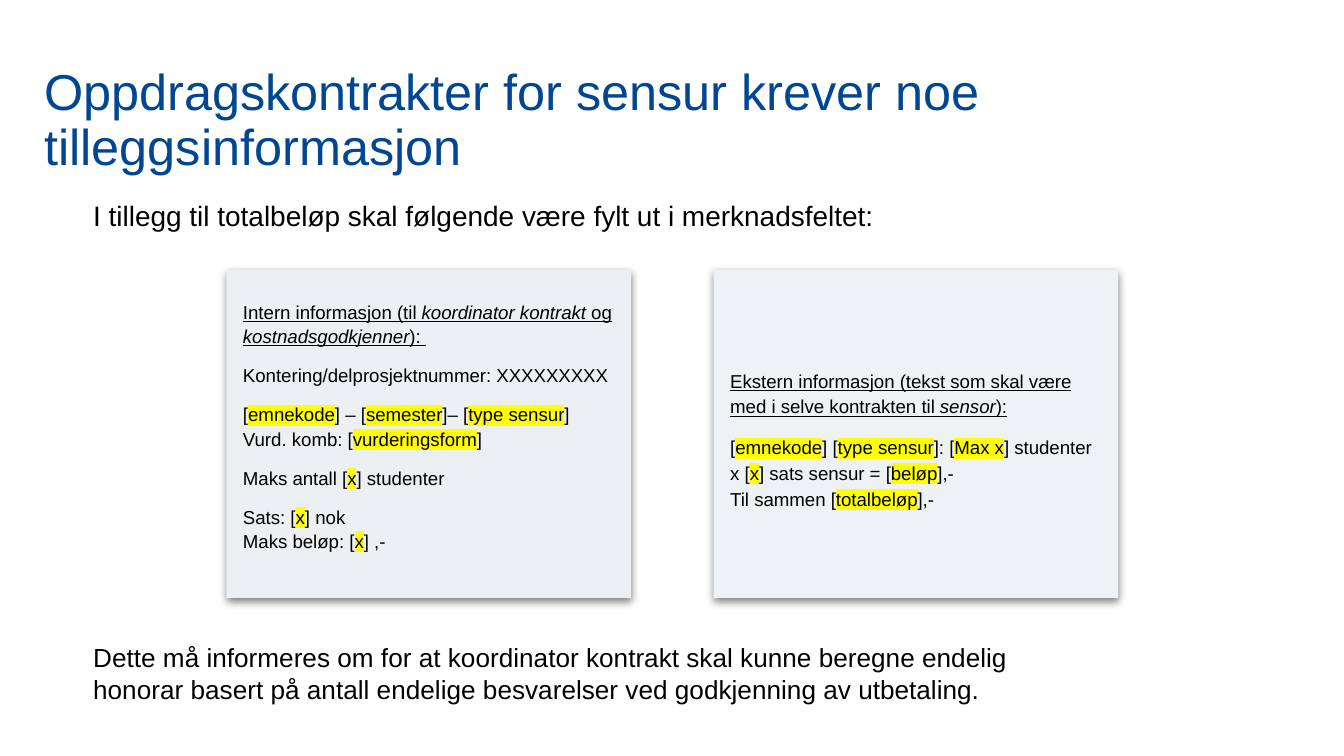
import pptx
import pptx.dml.color
import pptx.enum.shapes
import pptx.enum.text
import pptx.oxml
import pptx.oxml.ns
import pptx.util

PX = 4572
FONT = "Arial"
BLACK = "000000"
BLUE = "014693"
YELLOW = "FFFF00"
CARD_TOP, CARD_WIDTH, CARD_HEIGHT = 402, 602, 488
CARD_MARGIN = 5

INTERNAL_HEADING = "Intern informasjon (til |koordinator kontrakt| og |kostnadsgodkjenner|): "
INTERNAL_BODY = [
    "Kontering/delprosjektnummer: XXXXXXXXX",
    "[|emnekode|] – [|semester|]– [|type sensur|] \nVurd. komb: [|vurderingsform|]",
    "Maks antall [|x|] studenter",
    "Sats: [|x|] nok \nMaks beløp: [|x|] ,-",
]
EXTERNAL_HEADING = (
    "Ekstern informasjon (tekst som skal være med i selve kontrakten til |sensor|):"
)
EXTERNAL_BODY = [
    "[|emnekode|] [|type sensur|]: [|Max x|] studenter x [|x|] sats sensur = "
    "[|beløp|],- \nTil sammen [|totalbeløp|],-",
]


def px(value):
    """Convert whole px, 200 to the inch, to EMU."""
    return pptx.util.Emu(value * PX)


def color(value):
    """Convert a hex string to a colour."""
    return pptx.dml.color.RGBColor.from_string(value)


def highlight(run, value):
    """Put a highlight colour behind a run that already has a font colour."""
    properties = run.font._element
    mark = pptx.oxml.parse_xml(
        f'<a:highlight {pptx.oxml.ns.nsdecls("a")}><a:srgbClr val="{value}"/></a:highlight>'
    )
    properties.find(pptx.oxml.ns.qn("a:solidFill")).addnext(mark)


def write_paragraph(paragraph, text, size, fill=BLACK, spacing=1.0, before=0,
                    underline=False, mark=None):
    """Write text where parts between bars are italic or highlighted."""
    paragraph.alignment = pptx.enum.text.PP_ALIGN.LEFT
    paragraph.line_spacing = spacing
    paragraph.space_before = pptx.util.Pt(before)
    for index, part in enumerate(text.split("|")):
        marked = index % 2 == 1
        for line_number, line in enumerate(part.split("\n")):
            if line_number:
                paragraph.add_line_break()
            run = paragraph.add_run()
            run.text = line
            run.font.name = FONT
            run.font.size = pptx.util.Pt(size)
            run.font.color.rgb = color(fill)
            if underline:
                run.font.underline = True
            if marked and mark == "italic":
                run.font.italic = True
            if marked and mark == "highlight":
                highlight(run, YELLOW)


def set_frame(frame, margin_x=20, margin_y=10, anchor="TOP"):
    """Set wrapping, margins and anchor of a text frame."""
    frame.word_wrap = True
    frame.auto_size = pptx.enum.text.MSO_AUTO_SIZE.NONE
    frame.margin_left = frame.margin_right = px(margin_x)
    frame.margin_top = frame.margin_bottom = px(margin_y)
    frame.vertical_anchor = pptx.enum.text.MSO_ANCHOR[anchor]


def add_title(slide, text):
    """Place and format the slide title."""
    title = slide.shapes.title
    title.left, title.top, title.width, title.height = map(px, (46, 77, 1650, 208))
    set_frame(title.text_frame, anchor="MIDDLE")
    write_paragraph(title.text_frame.paragraphs[0], text, 27, fill=BLUE, spacing=0.9)


def add_body(slide, top, height, text, size):
    """Add a sentence in the body column."""
    box = slide.shapes.add_textbox(px(119), px(top), px(1410), px(height))
    set_frame(box.text_frame)
    write_paragraph(box.text_frame.paragraphs[0], text, size)


def add_rectangle(shapes, left, top, width, height, fill):
    """Add a filled rectangle without line or shadow."""
    shape = shapes.add_shape(
        pptx.enum.shapes.MSO_SHAPE.RECTANGLE, px(left), px(top), px(width), px(height)
    )
    shape.shadow.inherit = False
    shape.fill.solid()
    shape.fill.fore_color.rgb = color(fill)
    shape.line.fill.background()
    return shape


def add_shadow(shape):
    """Give a shape a soft shadow below."""
    effects = shape._element.spPr.find(pptx.oxml.ns.qn("a:effectLst"))
    effects.append(pptx.oxml.parse_xml(
        f'<a:outerShdw {pptx.oxml.ns.nsdecls("a")} blurRad="57150" dist="19050" '
        'dir="5400000" algn="ctr" rotWithShape="0"><a:srgbClr val="000000">'
        '<a:alpha val="50000"/></a:srgbClr></a:outerShdw>'
    ))


def add_card(slide, left, fill, text_top, text_height, heading, body, spacing):
    """Add a shadowed card with an underlined heading and template lines."""
    group = slide.shapes.add_group_shape()
    add_shadow(add_rectangle(group.shapes, left, CARD_TOP, CARD_WIDTH, CARD_HEIGHT, fill))
    label = add_rectangle(group.shapes, left + CARD_MARGIN, text_top,
                          CARD_WIDTH - 2 * CARD_MARGIN, text_height, fill)
    frame = label.text_frame
    set_frame(frame, margin_y=20)
    write_paragraph(frame.paragraphs[0], heading, 10, spacing=spacing,
                    underline=True, mark="italic")
    for text in body:
        write_paragraph(frame.add_paragraph(), text, 10, spacing=spacing,
                        before=8, mark="highlight")


def main():
    """Build the slide and save it."""
    presentation = pptx.Presentation()
    presentation.slide_width, presentation.slide_height = px(2000), px(1125)
    slide = presentation.slides.add_slide(presentation.slide_layouts[5])
    add_title(slide, "Oppdragskontrakter for sensur krever noe tilleggsinformasjon")
    add_card(slide, 337, "ECF0F3", 425, 422, INTERNAL_HEADING, INTERNAL_BODY, 1.08)
    add_card(slide, 1062, "EEF2F5", 525, 252, EXTERNAL_HEADING, EXTERNAL_BODY, 1.15)
    add_body(slide, 285, 70,
             "I tillegg til totalbeløp skal følgende være fylt ut i merknadsfeltet:", 15)
    add_body(slide, 945, 114,
             "Dette må informeres om for at koordinator kontrakt skal kunne beregne endelig "
             "honorar basert på antall endelige besvarelser ved godkjenning av utbetaling.", 14)
    presentation.save("out.pptx")


if __name__ == "__main__":
    main()
